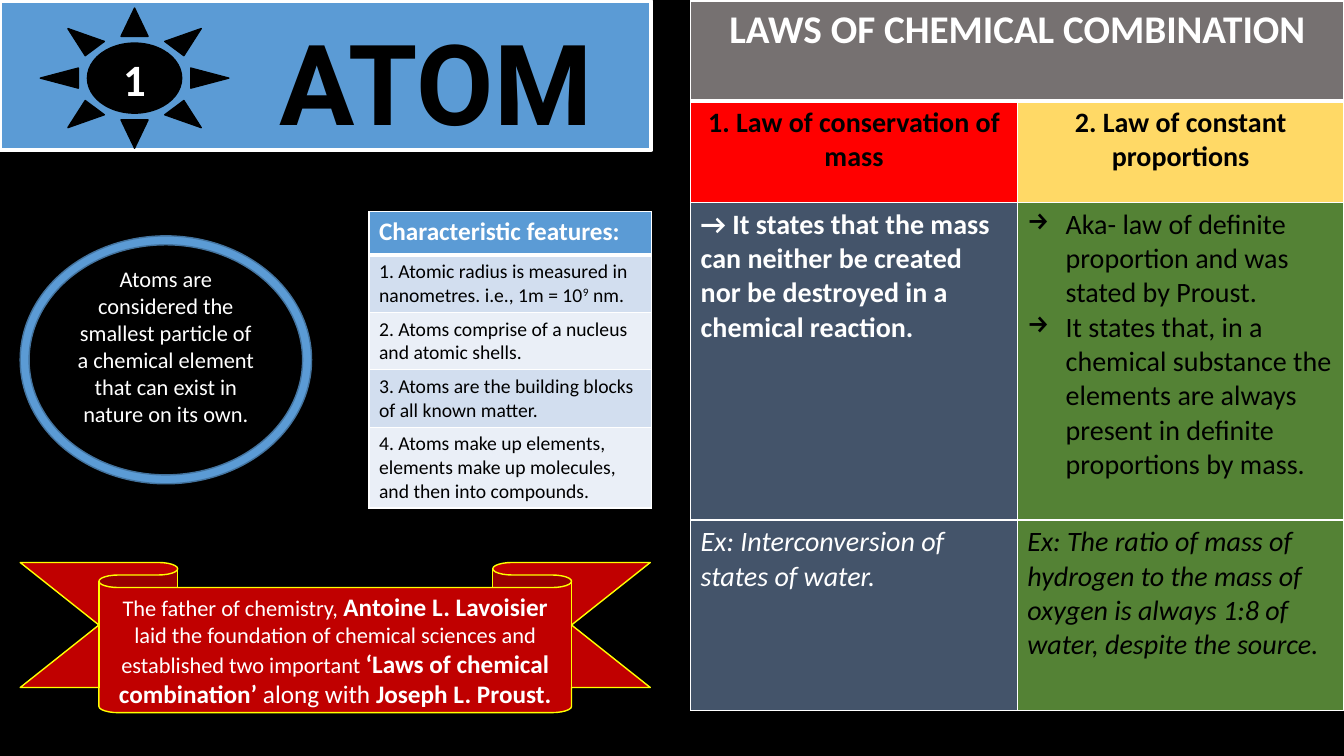
from lxml.etree import SubElement
from pptx import Presentation
from pptx.dml.color import RGBColor
from pptx.enum.shapes import MSO_SHAPE
from pptx.enum.text import MSO_ANCHOR, PP_ALIGN
from pptx.oxml import parse_xml
from pptx.oxml.ns import nsdecls, qn
from pptx.util import Inches, Pt

HUES = {
    "black": "000000", "white": "FFFFFF", "blue": "5B9BD5", "navy": "43739E",
    "pale": "D2DEEF", "mist": "EAEFF7", "wine": "C00000", "lemon": "FFFF00",
    "gray": "767171", "red": "FF0000", "gold": "FFD966", "slate": "44546A",
    "green": "548235",
}
HUE = {name: RGBColor.from_string(code) for name, code in HUES.items()}


def write(frame, paras, align=PP_ALIGN.LEFT, mark=None, **base):
    frame.word_wrap = True
    for i, runs in enumerate(paras):
        para = frame.paragraphs[0] if i == 0 else frame.add_paragraph()
        para.alignment = align
        if mark:
            props = para._p.get_or_add_pPr()
            props.set("marL", str(Inches(0.38)))
            props.set("indent", str(-Inches(0.38)))
            SubElement(props, qn("a:buChar"), char=mark)
        for text, extra in runs:
            run = para.add_run()
            run.text = text
            look = {"name": "Calibri", **base, **extra}
            run.font.color.rgb = HUE[look.pop("hue")]
            if "lift" in look:
                run._r.get_or_add_rPr().set("baseline", look.pop("lift"))
            for key, value in look.items():
                setattr(run.font, key, value)


def draw(shapes, kind, box, fill, line, width=1):
    shape = shapes.add_shape(kind, *map(Inches, box))
    shape.shadow.inherit = False
    shape.fill.solid()
    shape.fill.fore_color.rgb = HUE[fill]
    shape.line.color.rgb = HUE[line]
    shape.line.width = Pt(width)
    shape.text_frame.vertical_anchor = MSO_ANCHOR.MIDDLE
    return shape


deck = Presentation()
deck.slide_width, deck.slide_height = Inches(13.33), Inches(7.5)
slide = deck.slides.add_slide(deck.slide_layouts[6])
slide.background.fill.solid()
slide.background.fill.fore_color.rgb = HUE["black"]
mid = PP_ALIGN.CENTER

head = slide.shapes.add_group_shape().shapes
draw(head, MSO_SHAPE.RECTANGLE, (0, 0.01, 6.46, 1.48), "blue", "white", 3)
sun = draw(head, MSO_SHAPE.SUN, (0.4, 0.08, 1.87, 1.39), "black", "black")
write(sun.text_frame, [[("1", {})]], mid, size=Pt(32), bold=True, hue="white")
title = head.add_textbox(*map(Inches, (2, 0.08, 4.65, 1.19))).text_frame
write(title, [[("ATOM", {})]], mid, name="Roboto", size=Pt(80), bold=True, hue="black")
edge = parse_xml(
    f'<a:ln {nsdecls("a")} w="{Pt(0.75)}"><a:solidFill>'
    f'<a:srgbClr val="{HUES["white"]}"/></a:solidFill></a:ln>')
title.paragraphs[0].runs[0]._r.get_or_add_rPr().insert(0, edge)

ring = draw(slide.shapes, MSO_SHAPE.DONUT, (0.2, 2.34, 2.89, 2.46), "blue", "navy")
ring.adjustments[0] = 0.036
ring.text_frame.margin_top = 0
ring.text_frame.margin_bottom = Inches(0.27)
write(ring.text_frame, [[(
    "Atoms are considered the smallest particle of a chemical element "
    "that can exist in nature on its own.", {})]], mid, size=Pt(16), hue="white")

scroll = draw(slide.shapes, MSO_SHAPE.DOWN_RIBBON, (0.2, 5.58, 6.25, 1.49), "wine", "lemon")
scroll.adjustments[0], scroll.adjustments[1] = 0.167, 0.75
big = {"size": Pt(18)}
bold = {"size": Pt(18), "bold": True}
write(scroll.text_frame, [[
    ("The father of chemistry, ", {}),
    ("Antoine L. Lavoisier ", bold),
    ("laid the foundation of chemical sciences and established two important ", {}),
    ("‘Laws of chemical combination’ ", bold),
    ("along with ", big),
    ("Joseph L. Proust.", bold),
]], mid, size=Pt(16), bold=False, hue="white")

small = {"size": Pt(14), "bold": False, "hue": "black"}
law = {"size": Pt(20), "bold": True, "hue": "black", "align": mid}
note = {"size": Pt(20), "bold": False, "hue": "black"}
facts = [
    [("blue", [[("Characteristic features:", {})]],
      {"size": Pt(18), "bold": True, "hue": "white"})],
    [("pale", [[("1. Atomic radius is measured in nanometres. i.e., 1m = 10", {}),
                ("9", {"lift": "30000"}), (" nm.", {})]], small)],
    [("mist", [[("2. Atoms comprise of a nucleus and atomic shells.", {})]], small)],
    [("pale", [[("3. Atoms are the building blocks of all known matter.", {})]], small)],
    [("mist", [[("4. Atoms make up elements, elements make up molecules, "
                 "and then into compounds.", {})]], small)],
]
laws = [
    [("gray", [[("LAWS OF CHEMICAL COMBINATION", {})]],
      {"size": Pt(28), "bold": True, "hue": "white", "align": mid}),
     ("gray", [], {})],
    [("red", [[("1. Law of conservation of mass", {})]], law),
     ("gold", [[("2. Law of constant proportions", {})]], law)],
    [("slate", [[("→ It states that the mass can neither be created nor be "
                  "destroyed in a chemical reaction.", {})]],
      {**note, "bold": True, "hue": "white"}),
     ("green", [[("Aka- law of definite proportion and was stated by Proust.", {})],
                [("It states that, in a chemical substance the elements are always "
                  "present in definite proportions by mass.", {})]],
      {**note, "mark": "→"})],
    [("slate", [[("Ex: Interconversion of states of water.", {})]],
      {**note, "hue": "white", "italic": True}),
     ("green", [[("Ex: The ratio of mass of hydrogen to the mass of oxygen is always "
                  "1:8 of water, despite the source.", {})]],
      {**note, "italic": True})],
]

tables = [
    (facts, (3.66, 2.1, 2.8, 2.93), [0.43, 0.57, 0.57, 0.57, 0.79]),
    (laws, (6.85, 0.01, 6.48, 7.04), [0.99, 1.01, 3.15, 1.89]),
]
for rows, box, highs in tables:
    grid = slide.shapes.add_table(len(rows), len(rows[0]), *map(Inches, box)).table
    for r, row in enumerate(rows):
        grid.rows[r].height = Inches(highs[r])
        for c, (fill, paras, style) in enumerate(row):
            cell = grid.cell(r, c)
            for side in "LRTB":
                thick = (r, side) in [(0, "B"), (1, "T")]
                line = SubElement(cell._tc.get_or_add_tcPr(), qn(f"a:ln{side}"),
                                  w=str(Pt(3 if thick else 1)))
                paint = SubElement(line, qn("a:solidFill"))
                SubElement(paint, qn("a:srgbClr"), val=HUES["white"])
            cell.fill.solid()
            cell.fill.fore_color.rgb = HUE[fill]
            write(cell.text_frame, paras, **style)
    if len(rows[0]) > 1:
        grid.cell(0, 0).merge(grid.cell(0, 1))

deck.save("out.pptx")
